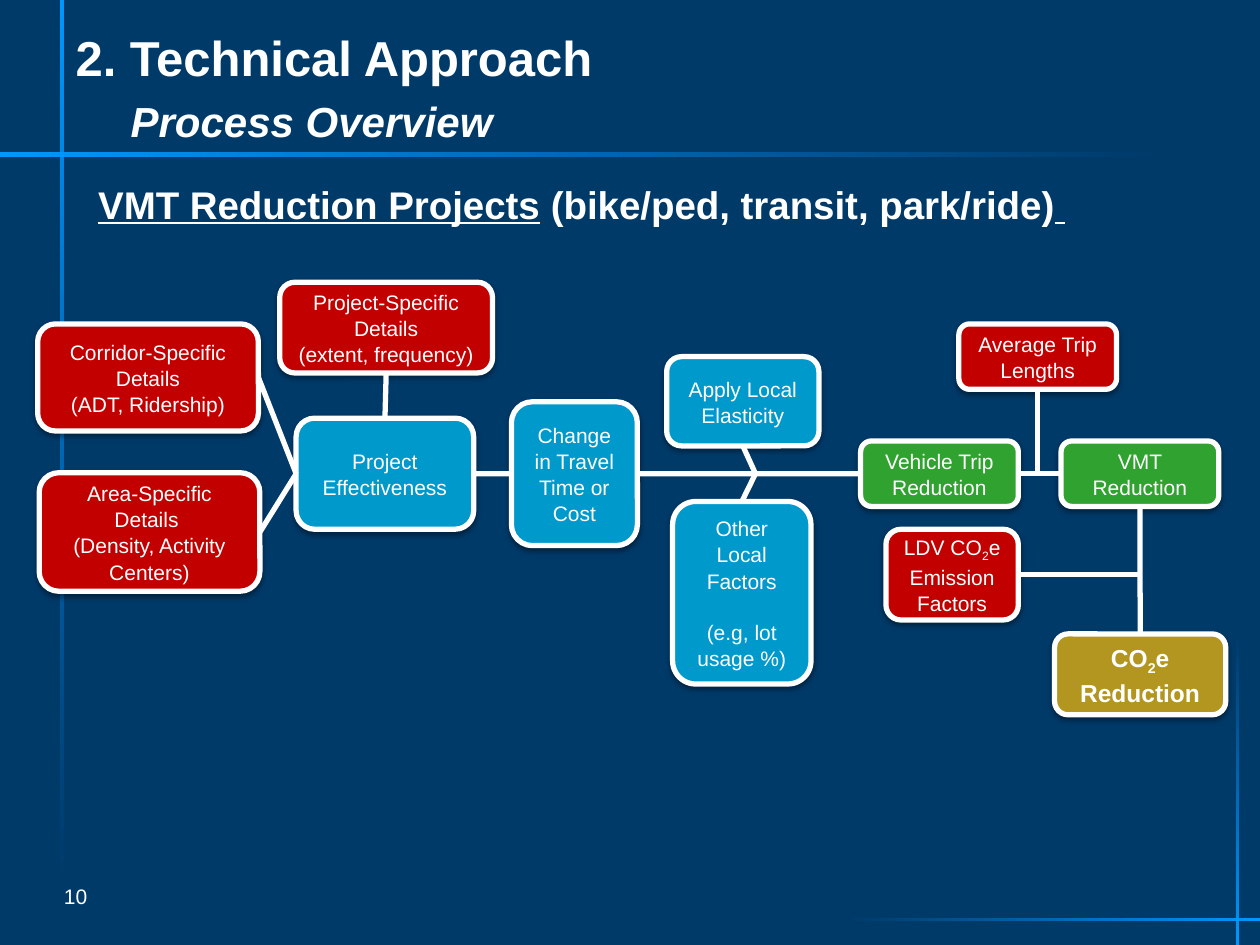
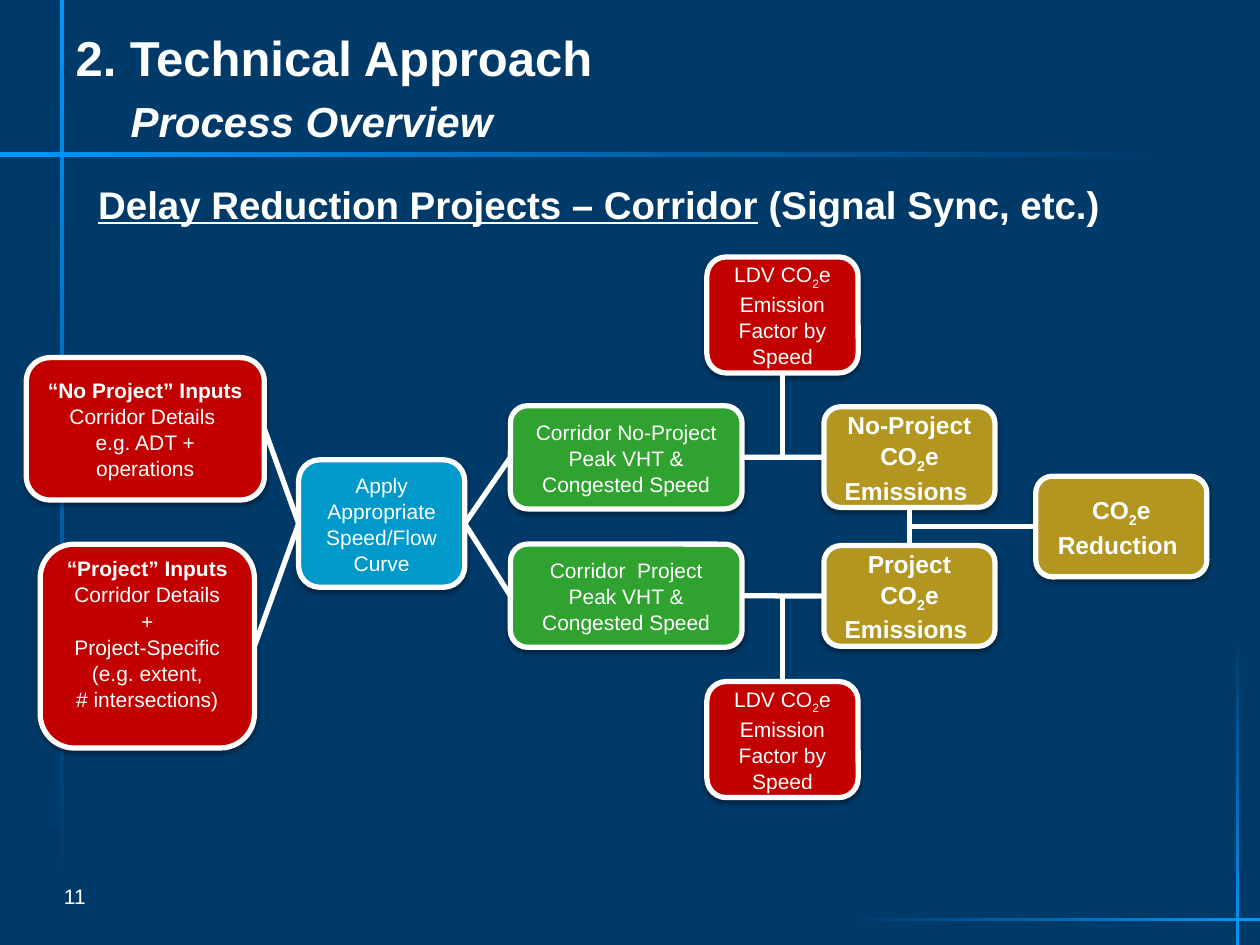
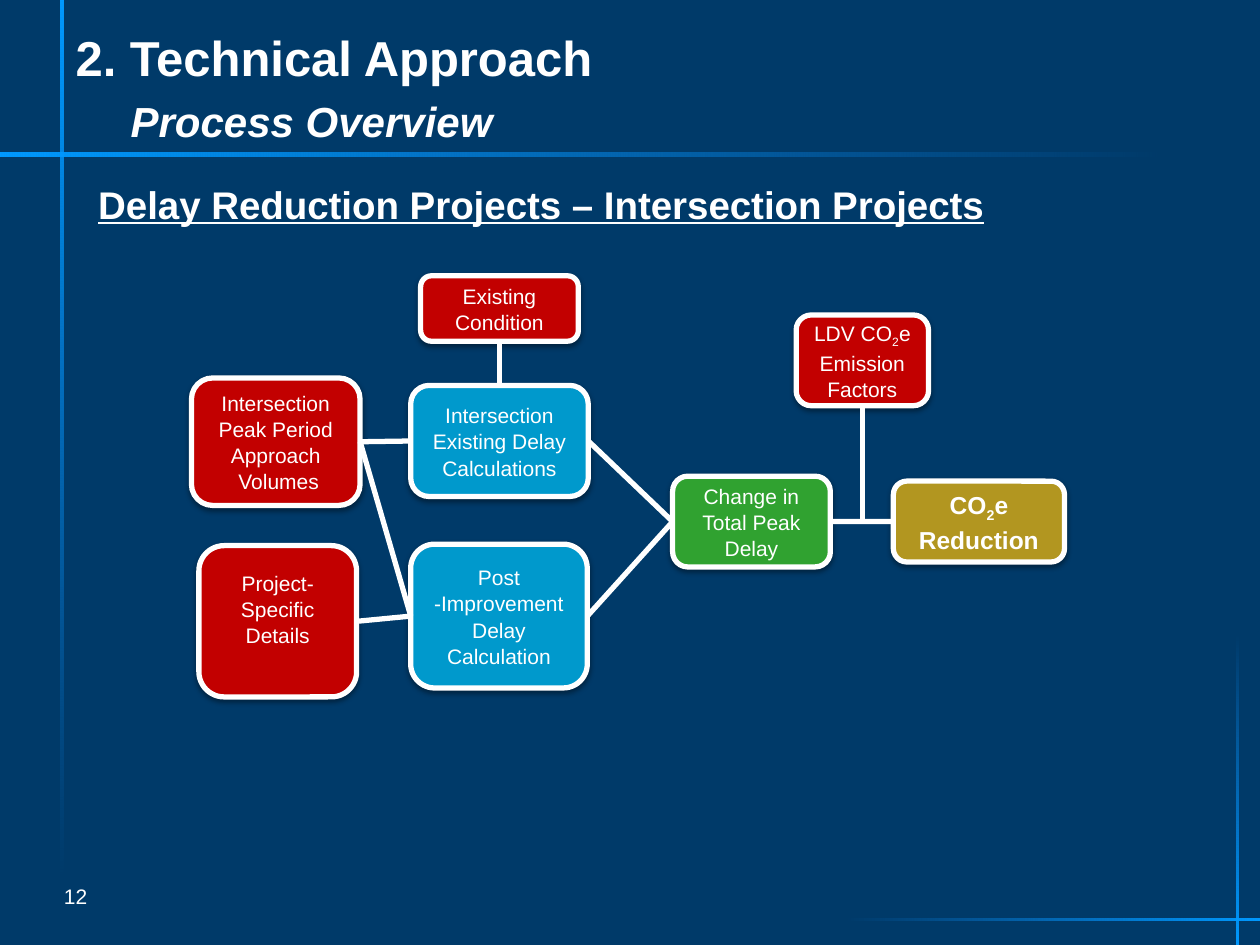
"""Build three process-overview slides: flowcharts of boxes joined by lines."""
import dataclasses

import lxml.etree
import pptx
import pptx.dml.color
import pptx.enum.shapes
import pptx.enum.text
import pptx.oxml.ns
import pptx.util

Cm = pptx.util.Cm
Pt = pptx.util.Pt
qn = pptx.oxml.ns.qn


@dataclasses.dataclass(frozen=True)
class Theme:
    font: str = "Arial"
    background: str = "003A69"
    white: str = "FFFFFF"
    shadow: str = "000000"
    glow: str = "0099FF"
    glow_end: str = "0C92FF"
    input: str = "C20000"
    step: str = "0099CC"
    result: str = "30A230"
    outcome: str = "B29620"
    title_size: int = 28
    subtitle_size: int = 24
    heading_size: int = 22
    outcome_size: int = 14
    body_size: int = 12
    leading: float = 1.04
    line_width: int = 3


THEME = Theme()
TITLE, SUBTITLE = "2. Technical Approach", "Process Overview"
FIRST_NUMBER = 10
SMALL, MEDIUM, WIDE = (3.18, 1.32), (3.58, 2.24), (4.67, 2.08)
FACTORS, TALL_FACTORS = (2.67, 1.83), (3.05, 2.34)
REDUCTION, EMISSIONS = (3.45, 1.63), (3.45, 2.03)

# Bars: left, top, width, height, gradient angle
BARS = [
    (0, 3.08, 23.44, 0.08, 0),
    (1.22, 0, 0.07, 17.73, 270),
    (17.04, 18.51, 8.36, 0.04, 180),
    (24.93, 12.8, 0.04, 6.25, 90),
]

# Boxes: kind, left, top, size, paragraphs (* bold, ^ gap above, _2_ subscript)
# Links: ends are box sides, or an x and a y taken from sides or given in cm
SLIDES = [
    {
        "heading": [("VMT Reduction Projects", True),
                    (" (bike/ped, transit, park/ride)", False), (" ", True)],
        "boxes": {
            "corridor": ("input", 0.76, 6.53, (4.45, 2.16),
                         ["Corridor-Specific Details", "(ADT, Ridership)"]),
            "project": ("input", 5.64, 5.69, (4.29, 1.83),
                        ["Project-Specific Details", "(extent, frequency)"]),
            "factors": ("step", 13.56, 10.11, (2.79, 3.68),
                        ["Other", "Local Factors", "^(e.g, lot usage %)"]),
            "effect": ("step", 5.97, 8.43, MEDIUM, ["Project Effectiveness"]),
            "change": ("step", 10.31, 8.1, (2.54, 2.9), ["Change in Travel Time or Cost"]),
            "elasticity": ("step", 13.44, 7.19, (3.07, 1.8), ["Apply Local Elasticity"]),
            "trips": ("result", 17.35, 8.89, SMALL, ["Vehicle Trip Reduction"]),
            "vmt": ("result", 21.39, 8.89, SMALL, ["VMT Reduction"]),
            "ldv": ("input", 17.86, 10.67, FACTORS, ["LDV CO_2_e Emission Factors"]),
            "lengths": ("input", 19.33, 6.53, SMALL, ["Average Trip Lengths"]),
            "co2": ("outcome", 21.26, 12.78, REDUCTION, ["CO_2_e Reduction"]),
            "area": ("input", 0.79, 9.53, (4.45, 2.39),
                     ["Area-Specific Details ", "(Density, Activity Centers)"]),
        },
        "raised": [],
        "links": [
            ("corridor.right", "effect.left"), ("area.right", "effect.left"),
            ("project.bottom", "effect.top"), ("effect.right", "change.left"),
            ("change.right", "trips.left"),
            ("elasticity.bottom", (15.23, "change.right")),
            ("factors.top", (15.23, "change.right")),
            ("trips.right", "vmt.left"),
            ("lengths.bottom", ("lengths.bottom", "vmt.left")),
            ("ldv.right", ("vmt.bottom", "ldv.right")),
            ("vmt.bottom", "co2.top"),
        ],
    },
    {
        "heading": [("Delay Reduction Projects – Corridor", True),
                    (" (Signal Sync, etc.)", False)],
        "boxes": {
            "with": ("input", 0.81, 10.97, (4.32, 4.11),
                     ["*“Project” Inputs", "Corridor Details", "+", "Project-Specific",
                      "(e.g. extent,", "# intersections)"]),
            "without": ("input", 0.53, 7.21, (4.8, 2.87),
                        ["*“No Project” Inputs", "Corridor Details ",
                         "e.g. ADT + operations"]),
            "curve": ("step", 6.02, 9.27, (3.35, 2.57),
                      ["Apply", "Appropriate Speed/Flow Curve"]),
            "vht_without": ("result", 10.29, 8.18, WIDE,
                            ["Corridor No-Project", "Peak VHT & Congested Speed"]),
            "vht_with": ("result", 10.29, 10.97, WIDE,
                         ["Corridor  Project Peak VHT & Congested Speed"]),
            "ldv_without": ("input", 14.25, 5.18, TALL_FACTORS,
                            ["LDV CO_2_e Emission Factor by Speed"]),
            "ldv_with": ("input", 14.25, 13.74, TALL_FACTORS,
                         ["LDV CO_2_e Emission Factor by Speed"]),
            "co2_without": ("outcome", 16.61, 8.2, EMISSIONS,
                            ["No-Project", "CO_2_e Emissions "]),
            "co2_with": ("outcome", 16.61, 11, EMISSIONS, ["Project CO_2_e Emissions "]),
            "co2": ("outcome", 20.88, 9.6, EMISSIONS, ["CO_2_e Reduction "]),
        },
        "raised": ["with"],
        "links": [
            ("without.right", "curve.left"), ("with.right", "curve.left"),
            ("curve.right", "vht_without.left"), ("curve.right", "vht_with.left"),
            ("vht_without.right", "co2_without.left"),
            ("vht_with.right", "co2_with.left"),
            ("ldv_without.bottom", ("ldv_without.bottom", "co2_without.left")),
            ("ldv_with.top", ("ldv_with.top", "co2_with.left")),
            ("co2_without.bottom", "co2_with.top"),
            (("co2_with.top", "co2.left"), "co2.left"),
        ],
    },
    {
        "heading": [("Delay Reduction Projects – Intersection Projects", True)],
        "boxes": {
            "volumes": ("input", 3.86, 7.62, (3.4, 2.57),
                        ["Intersection Peak Period Approach", " Volumes"]),
            "details": ("input", 4.01, 11, (3.18, 3.05), ["Project-Specific Details"]),
            "post": ("step", 8.28, 10.97, (3.56, 2.9),
                     ["Post -Improvement Delay Calculation"]),
            "change": ("result", 13.56, 9.6, FACTORS[:0] + (3.18, 1.83),
                       ["Change in Total Peak Delay"]),
            "ldv": ("input", 16.05, 6.35, FACTORS, ["LDV CO_2_e Emission Factors"]),
            "co2": ("outcome", 18.01, 9.7, REDUCTION, ["CO_2_e Reduction"]),
            "existing": ("step", 8.28, 7.77, MEDIUM,
                         ["Intersection Existing Delay Calculations"]),
            "condition": ("input", 8.48, 5.56, SMALL, ["Existing Condition"]),
        },
        "raised": ["details"],
        "links": [
            ("volumes.right", "existing.left"), ("volumes.right", "post.left"),
            ("details.right", "post.left"), ("condition.bottom", "existing.top"),
            ("existing.right", "change.left"), ("post.right", "change.left"),
            ("change.right", "co2.left"),
            ("ldv.bottom", ("ldv.bottom", "co2.left")),
        ],
    },
]


def rgb(value):
    return pptx.dml.color.RGBColor.from_string(value)


def style(paragraph, size, bold=False, align=pptx.enum.text.PP_ALIGN.LEFT):
    paragraph.alignment = align
    paragraph.line_spacing = THEME.leading
    font = paragraph.font
    font.name, font.size, font.bold = THEME.font, Pt(size), bold
    font.color.rgb = rgb(THEME.white)


def place(shape, left, top, width, height):
    shape.left, shape.top, shape.width, shape.height = map(Cm, (left, top, width, height))


def add_alpha(color, percent):
    lxml.etree.SubElement(color, qn("a:alpha"), val=str(percent * 1000))


def add_bars(slide, layout):
    for left, top, width, height, angle in BARS:
        bar = slide.shapes.add_shape(pptx.enum.shapes.MSO_SHAPE.RECTANGLE,
                                     *map(Cm, (left, top, width, height)))
        bar.shadow.inherit = False
        bar.line.fill.background()
        bar.fill.gradient()
        bar.fill.gradient_angle = angle
        start, end = bar.fill.gradient_stops
        start.color.rgb, end.color.rgb = rgb(THEME.glow), rgb(THEME.glow_end)
        add_alpha(list(bar.element.iter(qn("a:srgbClr")))[-1], 0)
        layout.shapes.element.append(bar.element)


def add_title(slide):
    title = slide.shapes.title
    place(title, 1.27, 0.08, 23.44, 3.02)
    frame = title.text_frame
    frame.auto_size = pptx.enum.text.MSO_AUTO_SIZE.NONE
    frame.vertical_anchor = pptx.enum.text.MSO_ANCHOR.BOTTOM
    paragraph = frame.paragraphs[0]
    tabs = lxml.etree.SubElement(paragraph._p.get_or_add_pPr(), qn("a:tabLst"))
    lxml.etree.SubElement(tabs, qn("a:tab"), pos=str(Cm(1.11)), algn="l")
    style(paragraph, THEME.title_size, bold=True)
    paragraph.add_run().text = TITLE
    paragraph.add_line_break()
    paragraph.add_run().text = "\t"
    subtitle = paragraph.add_run()
    subtitle.text = SUBTITLE
    subtitle.font.size, subtitle.font.italic = Pt(THEME.subtitle_size), True


def add_text(slide, area, size, parts, bold=False):
    frame = slide.shapes.add_textbox(*map(Cm, area)).text_frame
    frame.word_wrap = True
    style(frame.paragraphs[0], size, bold)
    for words, underlined in parts:
        run = frame.paragraphs[0].add_run()
        run.text = words
        if underlined:
            run.font.underline = True
    return frame


def add_shadow(shape):
    shape.shadow.inherit = False
    effects = shape.element.spPr.find(qn("a:effectLst"))
    outer = lxml.etree.SubElement(effects, qn("a:outerShdw"), blurRad=str(Pt(3.1)),
                                  dist=str(Pt(1.6)), dir="5400000", rotWithShape="0")
    add_alpha(lxml.etree.SubElement(outer, qn("a:srgbClr"), val=THEME.shadow), 38)


def add_box(slide, kind, left, top, size, lines, raised):
    box = slide.shapes.add_shape(pptx.enum.shapes.MSO_SHAPE.ROUNDED_RECTANGLE,
                                 *map(Cm, (left, top, *size)))
    add_shadow(box)
    box.fill.solid()
    box.fill.fore_color.rgb = rgb(getattr(THEME, kind))
    box.line.color.rgb, box.line.width = rgb(THEME.white), Pt(THEME.line_width)
    frame = box.text_frame
    frame.word_wrap = True
    frame.vertical_anchor = pptx.enum.text.MSO_ANCHOR.MIDDLE
    if raised:
        frame.margin_bottom = Cm(0.64)
    outcome = kind == "outcome"
    for index, line in enumerate(lines):
        paragraph = frame.add_paragraph() if index else frame.paragraphs[0]
        style(paragraph, THEME.outcome_size if outcome else THEME.body_size,
              outcome or line.startswith("*"), pptx.enum.text.PP_ALIGN.CENTER)
        if line.startswith("^"):
            paragraph.space_before = Pt(14.4)
        for position, words in enumerate(line.lstrip("*^").split("_")):
            run = paragraph.add_run()
            run.text = words
            if position % 2:
                run._r.get_or_add_rPr().set("baseline", "-25000")


def side_point(boxes, name):
    key, side = name.split(".")
    _, left, top, (width, height), _ = boxes[key]
    across, down = {"left": (0, 0.5), "right": (1, 0.5),
                    "top": (0.5, 0), "bottom": (0.5, 1)}[side]
    return left + width * across, top + height * down


def end_point(boxes, end):
    if isinstance(end, str):
        return side_point(boxes, end)
    return tuple(side_point(boxes, value)[axis] if isinstance(value, str) else value
                 for axis, value in enumerate(end))


def add_link(slide, start, end):
    link = slide.shapes.add_connector(pptx.enum.shapes.MSO_CONNECTOR.STRAIGHT,
                                      *map(Cm, start + end))
    link.line.color.rgb, link.line.width = rgb(THEME.white), Pt(THEME.line_width)
    lxml.etree.SubElement(link.element.spPr, qn("a:effectLst"))


def main():
    deck = pptx.Presentation()
    deck.slide_width, deck.slide_height = Cm(25.4), Cm(19.05)
    layout = deck.slide_layouts.get_by_name("Title Only")
    background = deck.slide_master.background.fill
    background.solid()
    background.fore_color.rgb = rgb(THEME.background)
    for number, content in enumerate(SLIDES, FIRST_NUMBER):
        slide = deck.slides.add_slide(layout)
        if number == FIRST_NUMBER:
            add_bars(slide, layout)
        add_title(slide)
        page = add_text(slide, (1.04, 17.55, 1.85, 1.02), THEME.body_size,
                        [(str(number), False)])
        page.vertical_anchor = pptx.enum.text.MSO_ANCHOR.MIDDLE
        add_text(slide, (1.73, 3.48, 22.71, 1.19), THEME.heading_size,
                 content["heading"], bold=True)
        boxes = content["boxes"]
        for key, box in boxes.items():
            add_box(slide, *box, raised=key in content["raised"])
        for start, end in content["links"]:
            add_link(slide, end_point(boxes, start), end_point(boxes, end))
    deck.save("out.pptx")


if __name__ == "__main__":
    main()
